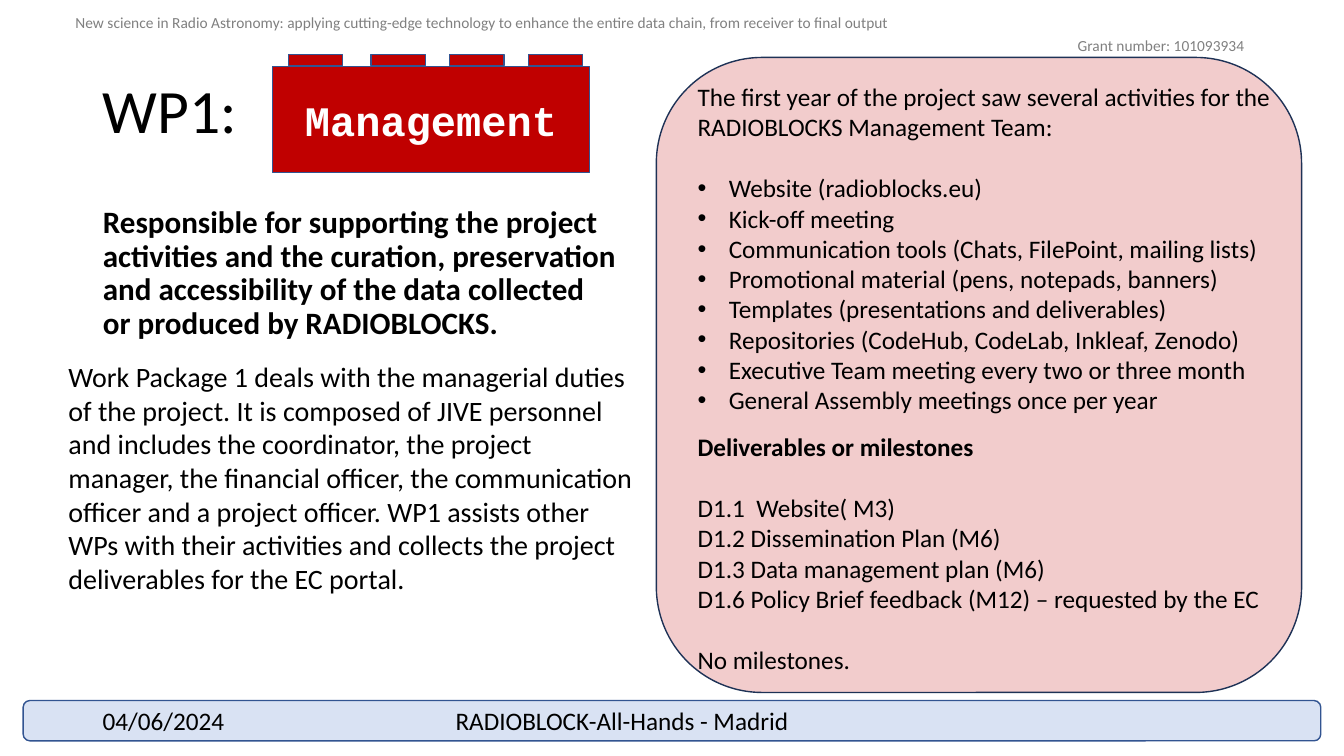
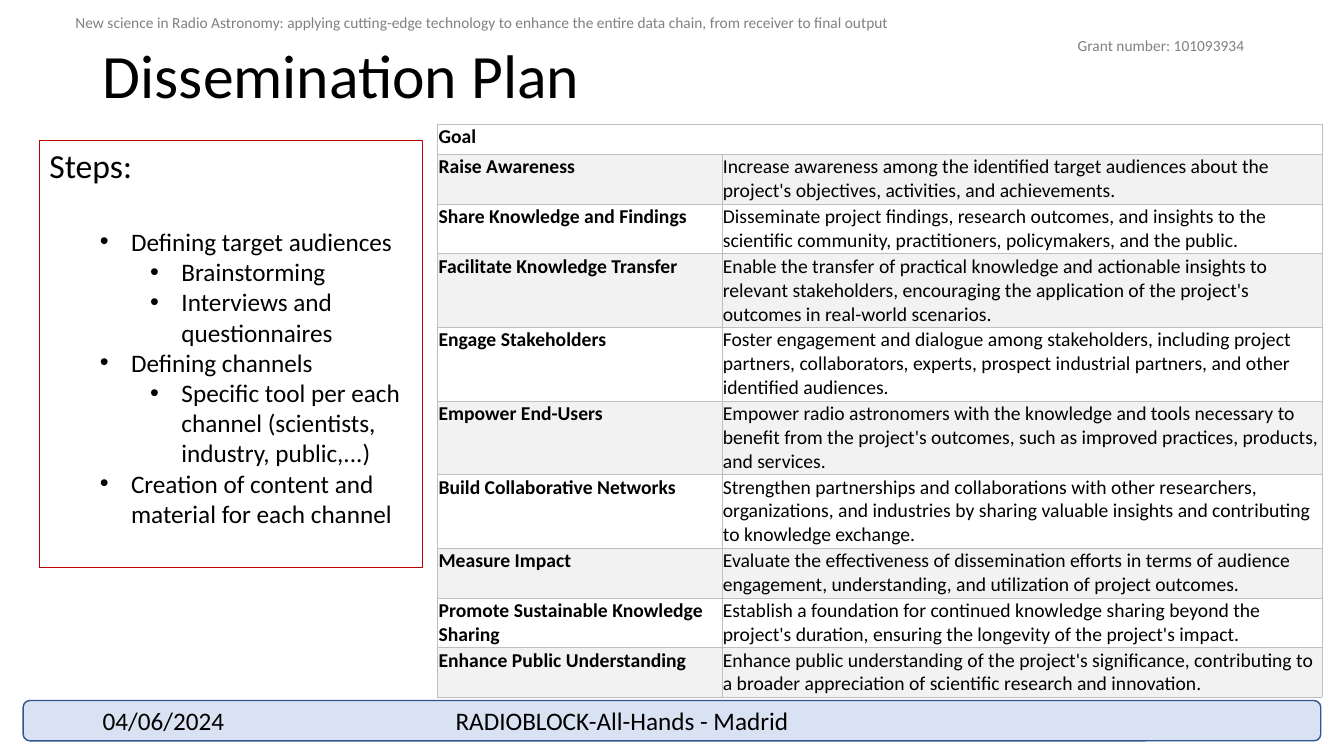
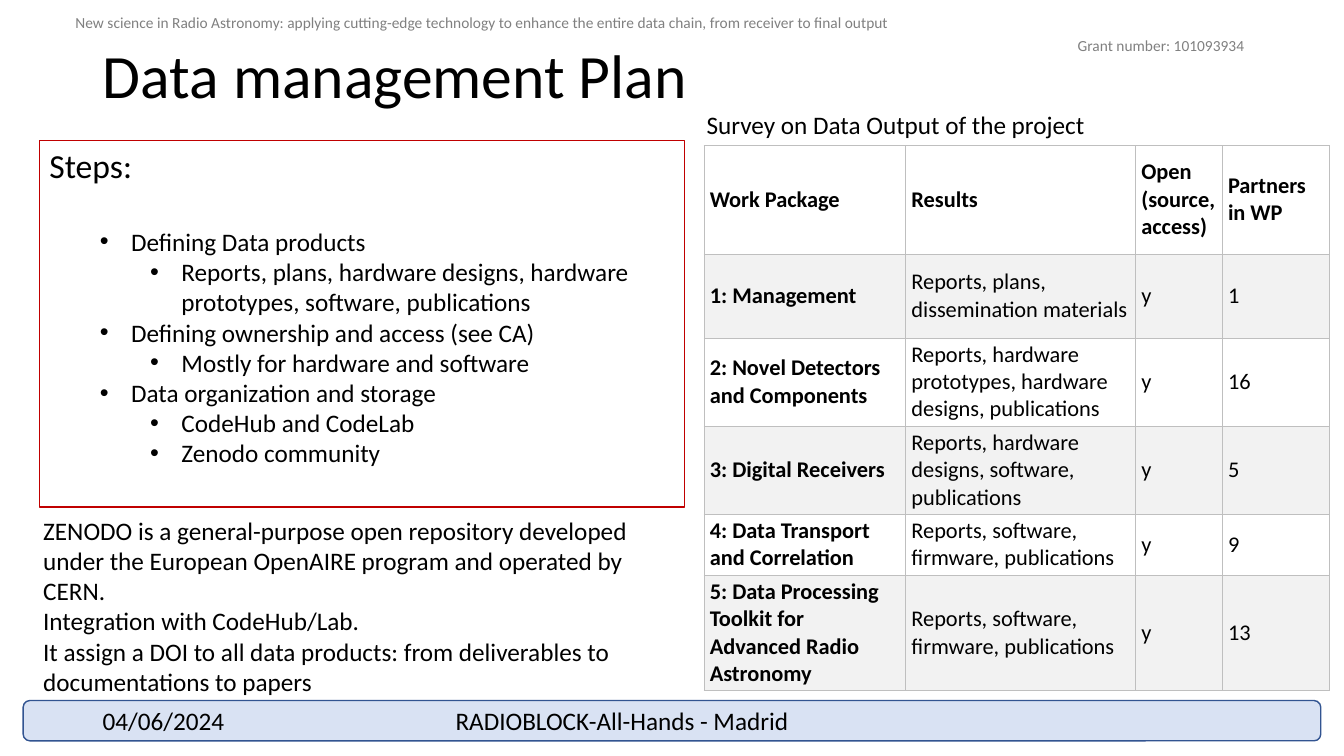
"""Build three slides on project management, dissemination and data plans."""
import pptx
import pptx.util
import pptx.dml.color
import pptx.enum.shapes
import pptx.enum.text
import pptx.oxml
import pptx.oxml.ns

Inches = pptx.util.Inches
Pt = pptx.util.Pt
SHAPE = pptx.enum.shapes.MSO_SHAPE
ANCHOR = pptx.enum.text.MSO_ANCHOR
ALIGN = pptx.enum.text.PP_ALIGN

BLACK, WHITE, GREY = "000000", "FFFFFF", "808080"
RED, BLUE, NAVY, DARK = "C00000", "4472C4", "325491", "1E3256"
STRIPE, RULE = "F2F2F2", "BFBFBF"
STEP, HANG = 0.5, 0.31

HEADS = [
    ("New science in Radio Astronomy: applying cutting-edge technology to enhance "
     "the entire data chain, from receiver to final output", (0.65, 0.08, 11.24, 0.29)),
    ("Grant number: 101093934", (10.59, 0.31, 2.33, 0.29)),
]
FEET = [
    ("04/06/2024", (0.92, 6.95, 3, 0.4)),
    ("RADIOBLOCK-All-Hands - Madrid", (4.42, 6.95, 4.5, 0.4)),
]
BAND = (0.23, 6.95, 12.87, 0.4)
TITLE = (0.92, 0.4, 11.5, 1.45)

ROLE = ("Responsible for supporting the project activities and the curation, "
        "preservation and accessibility of the data collected or produced by RADIOBLOCKS.")
DUTY = ("Work Package 1 deals with the managerial duties of the project. It is composed "
        "of JIVE personnel and includes the coordinator, the project manager, the "
        "financial officer, the communication officer and a project officer. WP1 assists "
        "other WPs with their activities and collects the project deliverables for the EC portal.")
WORK = [
    ("The first year of the project saw several activities for the "
     "RADIOBLOCKS Management Team:", {}),
    ("Website (radioblocks.eu)", {"depth": 0, "gap": 22}),
    ("Kick-off meeting", {"depth": 0}),
    ("Communication tools (Chats, FilePoint, mailing lists)", {"depth": 0}),
    ("Promotional material (pens, notepads, banners)", {"depth": 0}),
    ("Templates (presentations and deliverables)", {"depth": 0}),
    ("Repositories (CodeHub, CodeLab, Inkleaf, Zenodo)", {"depth": 0}),
    ("Executive Team meeting every two or three month", {"depth": 0}),
    ("General Assembly meetings once per year", {"depth": 0}),
]
DUE = [
    ("Deliverables or milestones", {"bold": True}),
    ("D1.1  Website( M3)", {"gap": 22}),
    ("D1.2 Dissemination Plan (M6)", {}),
    ("D1.3 Data management plan (M6)", {}),
    ("D1.6 Policy Brief feedback (M12) – requested by the EC", {}),
    ("No milestones.", {"gap": 22}),
]
KNOBS = [2.86, 3.68, 4.46, 5.24]

REACH = [
    ("Defining target audiences", 1),
    ("Brainstorming", 2),
    ("Interviews and questionnaires", 2),
    ("Defining channels", 1),
    ("Specific tool per each channel (scientists, industry, public,...)", 2),
    ("Creation of content and material for each channel", 1),
]
GOALS = [
    ("Goal", ""),
    ("Raise Awareness", "Increase awareness among the identified target audiences about "
     "the project's objectives, activities, and achievements."),
    ("Share Knowledge and Findings", "Disseminate project findings, research outcomes, and "
     "insights to the scientific community, practitioners, policymakers, and the public."),
    ("Facilitate Knowledge Transfer", "Enable the transfer of practical knowledge and "
     "actionable insights to relevant stakeholders, encouraging the application of the "
     "project's outcomes in real-world scenarios."),
    ("Engage Stakeholders", "Foster engagement and dialogue among stakeholders, including "
     "project partners, collaborators, experts, prospect industrial partners, and other "
     "identified audiences."),
    ("Empower End-Users", "Empower radio astronomers with the knowledge and tools necessary "
     "to benefit from the project's outcomes, such as improved practices, products, and services."),
    ("Build Collaborative Networks", "Strengthen partnerships and collaborations with other "
     "researchers, organizations, and industries by sharing valuable insights and "
     "contributing to knowledge exchange."),
    ("Measure Impact", "Evaluate the effectiveness of dissemination efforts in terms of "
     "audience engagement, understanding, and utilization of project outcomes."),
    ("Promote Sustainable Knowledge Sharing", "Establish a foundation for continued knowledge "
     "sharing beyond the project's duration, ensuring the longevity of the project's impact."),
    ("Enhance Public Understanding", "Enhance public understanding of the project's "
     "significance, contributing to a broader appreciation of scientific research and innovation."),
]
STORE = [
    ("Defining Data products", 1),
    ("Reports, plans, hardware designs, hardware prototypes, software, publications", 2),
    ("Defining ownership and access (see CA)", 1),
    ("Mostly for hardware and software", 2),
    ("Data organization and storage", 1),
    ("CodeHub and CodeLab", 2),
    ("Zenodo community", 2),
]
SURVEY = [
    ("Work Package", "Results", "Open (source, access)", "Partners in WP"),
    ("1: Management", "Reports, plans, dissemination materials", "y", "1"),
    ("2: Novel Detectors and Components",
     "Reports, hardware prototypes, hardware designs, publications", "y", "16"),
    ("3: Digital Receivers", "Reports, hardware designs, software, publications", "y", "5"),
    ("4: Data Transport and Correlation", "Reports, software, firmware, publications", "y", "9"),
    ("5: Data Processing Toolkit for Advanced Radio Astronomy",
     "Reports, software, firmware, publications", "y", "13"),
]
NOTES = [
    ("ZENODO is a general-purpose open repository developed under the European OpenAIRE "
     "program and operated by CERN.", {}),
    ("Integration with CodeHub/Lab.", {}),
    ("It assign a DOI to all data products: from deliverables to documentations to papers", {}),
]


def tone(code):
    return pptx.dml.color.RGBColor.from_string(code)


def put(item, **vals):
    for name, val in vals.items():
        setattr(item, name, val)


def node(home, tag, **vals):
    part = pptx.oxml.ns.qn(tag)
    kid = home.makeelement(part, vals)
    home.append(kid)
    return kid


def place(shape, box):
    sides = ("left", "top", "width", "height")
    put(shape, **{side: Inches(val) for side, val in zip(sides, box)})


def write(frame, paras, size=18, color=BLACK, face="Calibri", bold=False,
          align=ALIGN.LEFT, space=1.0, **look):
    put(frame, word_wrap=True, auto_size=pptx.enum.text.MSO_AUTO_SIZE.NONE, **look)
    for num, (text, opts) in enumerate(paras):
        para = frame.add_paragraph() if num else frame.paragraphs[0]
        depth = opts.get("depth")
        props = para._p.get_or_add_pPr()
        if depth is None:
            put(props, marL=0, indent=0)
            props.set("marL", "0")
            props.set("indent", "0")
            node(props, "a:buNone")
        else:
            para.level = depth
            props.set("marL", str(Inches(HANG + STEP * depth)))
            props.set("indent", str(-Inches(HANG)))
            node(props, "a:buFont", typeface="Arial")
            node(props, "a:buChar", char="•")
        put(para, alignment=align, line_spacing=space, space_after=Pt(0),
            space_before=Pt(opts.get("gap", 0)))
        run = para.add_run()
        run.text = text
        put(run.font, name=face, size=Pt(opts.get("size", size)),
            bold=opts.get("bold", bold))
        run.font.color.rgb = tone(color)


def label(slide, box, paras, **style):
    shape = slide.shapes.add_textbox(*map(Inches, box))
    write(shape.text_frame, paras, **style)
    return shape


def block(shapes, kind, box, fill, line, alpha=None):
    shape = shapes.add_shape(kind, *map(Inches, box))
    shape.shadow.inherit = False
    shape.fill.solid()
    shape.fill.fore_color.rgb = tone(fill)
    if alpha:
        for clr in shape._element.spPr.xpath("./a:solidFill/a:srgbClr"):
            node(clr, "a:alpha", val=str(alpha * 1000))
    shape.line.color.rgb = tone(line)
    shape.line.width = Pt(1)
    return shape


def share(deck, slide):
    parts = [block(slide.shapes, SHAPE.ROUNDED_RECTANGLE, BAND, BLUE, NAVY, 20)]
    parts += [label(slide, box, [(text, {})], size=11, color=GREY) for text, box in HEADS]
    for num, part in enumerate(parts, 20):
        part._element.xpath("./p:nvSpPr/p:cNvPr")[0].set("id", str(num))
        deck.slide_master.shapes._spTree.append(part._element)


def start(deck, title, anchor=ANCHOR.TOP):
    slide = deck.slides.add_slide(deck.slide_layouts[1])
    place(slide.shapes.title, TITLE)
    write(slide.shapes.title.text_frame, [(title, {})], size=44, space=0.9,
          vertical_anchor=anchor)
    for text, box in FEET:
        label(slide, box, [(text, {})])
    return slide


def steps(slide, box, items):
    body = slide.placeholders[1]
    place(body, box)
    body.line.color.rgb = tone(RED)
    body.line.width = Pt(0.75)
    paras = [("Steps:", {"size": 24})]
    paras += [(text, {"depth": depth, "gap": 0 if num else 29})
              for num, (text, depth) in enumerate(items)]
    write(body.text_frame, paras)


def grid(slide, box, data, cols, rows, size, pads, anchor):
    table = slide.shapes.add_table(len(rows), len(cols), *map(Inches, box)).table
    put(table, first_row=False, horz_banding=False)
    for col, width in zip(table.columns, cols):
        col.width = Inches(width)
    for row, height in zip(table.rows, rows):
        row.height = Inches(height)
    for r, line in enumerate(data):
        for c, text in enumerate(line):
            cell = table.cell(r, c)
            props = cell._tc.get_or_add_tcPr()
            for side in "LRTB":
                edge = node(props, "a:ln" + side, w=str(Pt(0.3)))
                node(node(edge, "a:solidFill"), "a:srgbClr", val=RULE)
            if r % 2:
                cell.fill.solid()
                cell.fill.fore_color.rgb = tone(STRIPE)
            else:
                cell.fill.background()
            wide, high = map(Inches, pads)
            put(cell, vertical_anchor=anchor, margin_left=wide, margin_right=wide,
                margin_top=high, margin_bottom=high)
            if text:
                write(cell.text_frame, [(text, {})], size=size, bold=r == 0 or c == 0)
    return table


def manage(deck):
    slide = start(deck, "WP1:", ANCHOR.MIDDLE)
    share(deck, slide)
    block(slide.shapes, SHAPE.ROUNDED_RECTANGLE, (6.51, 0.57, 6.4, 6.3), RED, DARK, 20)
    body = slide.placeholders[1]
    place(body, (0.92, 2, 5.32, 1.46))
    write(body.text_frame, [(ROLE, {})], size=22.2, bold=True, space=0.9)
    brick = slide.shapes.add_group_shape().shapes
    base = block(brick, SHAPE.RECTANGLE, (2.7, 0.66, 3.15, 1.05), RED, NAVY)
    write(base.text_frame, [("Management", {})], size=30, color=WHITE, face="Courier New",
          bold=True, align=ALIGN.CENTER, vertical_anchor=ANCHOR.MIDDLE)
    for left in KNOBS:
        block(brick, SHAPE.RECTANGLE, (left, 0.54, 0.54, 0.11), RED, NAVY)
    label(slide, (0.58, 3.52, 5.82, 2.46), [(DUTY, {})], size=20)
    label(slide, (6.82, 4.23, 5.99, 2.52), DUE)
    label(slide, (6.82, 0.76, 6.08, 3.74), WORK)


def spread(deck):
    slide = start(deck, "Dissemination Plan")
    steps(slide, (0.39, 1.39, 3.8, 4.24), REACH)
    table = grid(slide, (4.34, 1.23, 8.77, 5.58), GOALS, [2.82, 5.95],
                 [0.3, 0.42, 0.47, 0.59, 0.57, 0.59, 0.62, 0.49, 0.49, 0.47],
                 14, (0.01, 0.01), ANCHOR.TOP)
    table.cell(0, 0).merge(table.cell(0, 1))


def survey(deck):
    slide = start(deck, "Data management Plan")
    grid(slide, (6.98, 1.44, 6.21, 5.37), SURVEY, [2, 2.28, 0.86, 1.06],
         [1.08, 0.83, 0.83, 0.83, 0.57, 1.09], 16, (0.06, 0.03), ANCHOR.MIDDLE)
    label(slide, (6.91, 1.04, 6.67, 0.4), [("Survey on Data Output of the project", {})])
    steps(slide, (0.39, 1.39, 6.4, 3.64), STORE)
    label(slide, (0.33, 5.06, 6.46, 1.92), NOTES)


def main():
    deck = pptx.Presentation()
    put(deck, slide_width=Inches(13.33), slide_height=Inches(7.5))
    for build in (manage, spread, survey):
        build(deck)
    deck.save("out.pptx")


if __name__ == "__main__":
    main()
